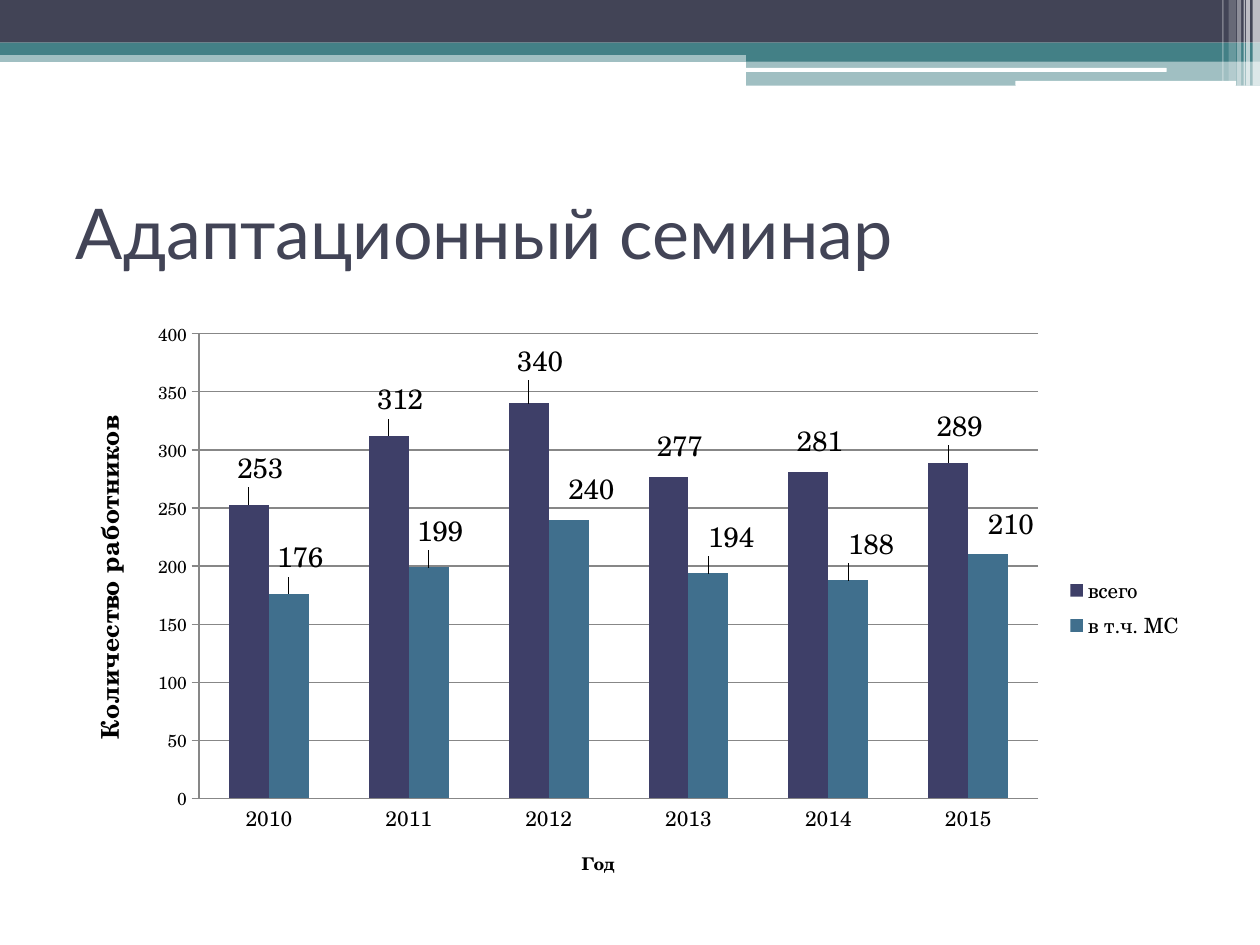
import pptx
import pptx.util
import pptx.chart.data
import pptx.dml.color
import pptx.enum.chart
import pptx.enum.shapes
import pptx.enum.text
import pptx.oxml
import pptx.oxml.ns
from lxml import etree

Cm = pptx.util.Cm
Pt = pptx.util.Pt
RGB = pptx.dml.color.RGBColor
XL = pptx.enum.chart
KIND = pptx.enum.shapes.MSO_SHAPE
qn = pptx.oxml.ns.qn

DARK = RGB(0x42, 0x44, 0x56)
TEAL = RGB(0x43, 0x80, 0x86)
WHITE = RGB(0xFF, 0xFF, 0xFF)
BLACK = RGB(0x00, 0x00, 0x00)
GRAY = RGB(0x87, 0x87, 0x87)
NAVY = RGB(0x3E, 0x3F, 0x68)
BLUE = RGB(0x40, 0x6F, 0x8D)
SERIF = "TeX Gyre Schola"

TITLE = "Адаптационный семинар"
YEARS = ["2010", "2011", "2012", "2013", "2014", "2015"]
SERIES = [
    ("всего", NAVY, [253, 312, 340, 277, 281, 289],
     [(0.01, -0.02), (0.01, -0.02), (0.01, -0.03),
      (0.01, -0.01), (0.01, -0.01), (0.01, -0.02)]),
    ("в т.ч. МС", BLUE, [176, 199, 240, 194, 188, 210],
     [(0.01, -0.02), (0.01, -0.02), (0.02, -0.01),
      (0.02, -0.02), (0.02, -0.02), (0.02, -0.01)]),
]
PLOT = {"x": 0.12, "y": 0.04, "w": 0.74, "h": 0.78}

BANDS = [
    (0, 1.02, 25.4, 0.23, TEAL, 50),
    (0, 0, 25.4, 0.86, DARK, 100),
    (0, 0.86, 25.4, 0.25, TEAL, 100),
    (15.04, 0.99, 10.36, 0.25, TEAL, 100),
    (15.04, 1.22, 10.36, 0.51, TEAL, 50),
]
PILLS = [
    (15.01, 1.37, 8.51, 0.08, WHITE, 100),
    (20.47, 1.63, 4.45, 0.1, WHITE, 100),
]
STRIPES = [
    (25.25, 0.15, 1.73, 65),
    (25.12, 0.08, 1.73, 65),
    (25.07, 0.03, 1.73, 60),
    (24.94, 0.08, 1.73, 40),
    (24.77, 0.15, 1.63, 20),
    (24.64, 0.03, 1.63, 30),
]


def add_bar(slide, kind, x, y, w, h, color, alpha):
    bar = slide.shapes.add_shape(kind, Cm(x), Cm(y), Cm(w), Cm(h))
    bar.shadow.inherit = False
    bar.line.fill.background()
    bar.fill.solid()
    bar.fill.fore_color.rgb = color
    if alpha < 100:
        tint = bar._element.spPr.find(".//" + qn("a:srgbClr"))
        etree.SubElement(tint, qn("a:alpha"), val=str(alpha * 1000))
    return bar


def add_head(slide):
    for band in BANDS:
        add_bar(slide, KIND.RECTANGLE, *band)
    for pill in PILLS:
        add_bar(slide, KIND.ROUNDED_RECTANGLE, *pill).adjustments[0] = 0.17
    for x, w, h, alpha in STRIPES:
        add_bar(slide, KIND.RECTANGLE, x, 0, w, h, WHITE, alpha)


def add_title(slide):
    title = slide.shapes.title
    title.left, title.top = Cm(1.27), Cm(3.18)
    title.width, title.height = Cm(22.86), Cm(2.97)
    frame = title.text_frame
    frame.text = TITLE
    frame.vertical_anchor = pptx.enum.text.MSO_ANCHOR.MIDDLE
    line = frame.paragraphs[0]
    line.alignment = pptx.enum.text.PP_ALIGN.LEFT
    set_font(line.runs[0].font, 40, DARK, "Lato")


def set_font(font, size, color=BLACK, name=SERIF, bold=False):
    font.size, font.name, font.bold = Pt(size), name, bold
    font.color.rgb = color


def set_axis(axis, text, size, head, tick):
    axis.has_title = True
    frame = axis.axis_title.text_frame
    frame.text = text
    set_font(frame.paragraphs[0].runs[0].font, head, bold=True)
    set_font(axis.tick_labels.font, size)
    axis.major_tick_mark = tick
    axis.minor_tick_mark = XL.XL_TICK_MARK.NONE
    axis.format.line.color.rgb = GRAY


def set_place(layout, **parts):
    manual = etree.SubElement(layout, qn("c:manualLayout"))
    for key, val in parts.items():
        etree.SubElement(manual, qn("c:" + key), val=str(val))


def set_series(series, color, shifts):
    series.format.fill.solid()
    series.format.fill.fore_color.rgb = color
    series.invert_if_negative = False
    labels = series.data_labels
    labels.show_value = True
    set_font(labels.font, 16)
    for i in range(len(shifts)):
        label = series.points[i].data_label
        set_font(label.font, 16)
        label.position = XL.XL_LABEL_POSITION.OUTSIDE_END
    for node, (x, y) in zip(series._element.iter(qn("c:dLbl")), shifts):
        layout = etree.Element(qn("c:layout"))
        set_place(layout, x=x, y=y)
        node.insert(1, layout)


def add_chart(slide):
    data = pptx.chart.data.CategoryChartData()
    data.categories = YEARS
    for name, color, vals, shifts in SERIES:
        data.add_series(name, vals)
    chart = slide.shapes.add_chart(
        XL.XL_CHART_TYPE.COLUMN_CLUSTERED,
        Cm(1.27), Cm(6.25), Cm(22.86), Cm(12.01), data).chart
    set_font(chart.font, 10)
    chart.has_title = False
    chart.has_legend = True
    chart.legend.position = XL.XL_LEGEND_POSITION.RIGHT
    chart.legend.include_in_layout = False
    set_font(chart.legend.font, 12)

    marks = XL.XL_TICK_MARK
    set_axis(chart.category_axis, "Год", 12, 10, marks.NONE)
    axis = chart.value_axis
    set_axis(axis, "Количество работников", 10, 14, marks.OUTSIDE)
    axis.minimum_scale, axis.maximum_scale, axis.major_unit = 0, 400, 50
    axis.has_major_gridlines = True
    axis.major_gridlines.format.line.color.rgb = GRAY

    plot = chart.plots[0]
    plot.vary_by_categories = False
    plot.gap_width, plot.overlap = 150, 0
    for series, (name, color, vals, shifts) in zip(plot.series, SERIES):
        set_series(series, color, shifts)

    area = chart._chartSpace.find(".//" + qn("c:plotArea"))
    layout = area.find(qn("c:layout"))
    if layout is None:
        layout = etree.Element(qn("c:layout"))
        area.insert(0, layout)
    set_place(layout, layoutTarget="inner", xMode="edge", yMode="edge", **PLOT)


def main():
    deck = pptx.Presentation()
    deck.slide_width, deck.slide_height = Cm(25.4), Cm(19.05)
    slide = deck.slides.add_slide(deck.slide_layouts[5])
    add_head(slide)
    add_title(slide)
    add_chart(slide)
    deck.save("out.pptx")


if __name__ == "__main__":
    main()
